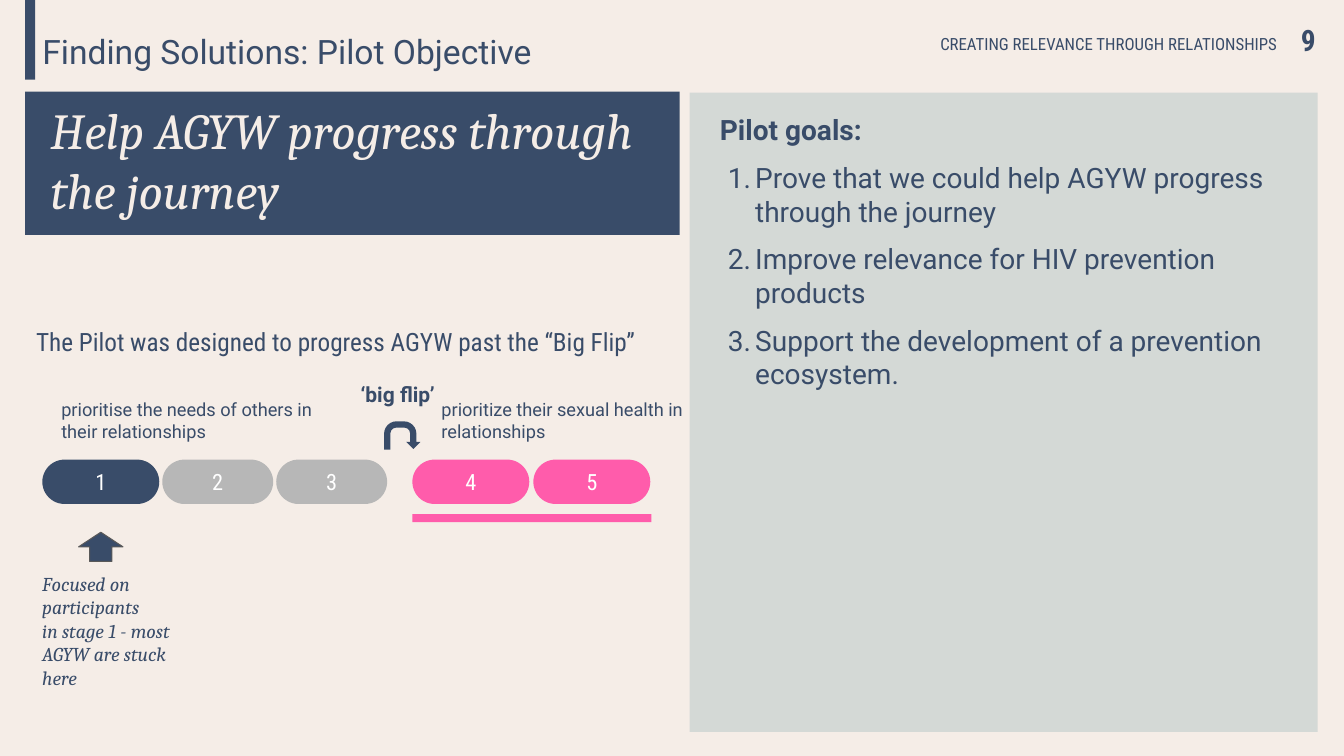
from pptx import Presentation
from pptx.dml.color import RGBColor
from pptx.enum.shapes import MSO_SHAPE
from pptx.enum.text import MSO_ANCHOR, MSO_AUTO_SIZE, PP_ALIGN
from pptx.oxml.ns import qn
from pptx.util import Inches, Pt
from lxml.etree import SubElement

NAVY = RGBColor(0x39, 0x4C, 0x69)
CREAM = RGBColor(0xF5, 0xED, 0xE7)
SAGE = RGBColor(0xD4, 0xD9, 0xD6)
GREY = RGBColor(0xB7, 0xB7, 0xB7)
DARK_GREY = RGBColor(0x59, 0x59, 0x59)
PINK = RGBColor(0xFF, 0x5C, 0xAB)
WHITE = RGBColor(0xFF, 0xFF, 0xFF)

SANS, NARROW, SERIF = "Roboto", "Roboto Condensed", "Cambria"
EVEN = (0.1, 0.1, 0.1, 0.1)
NONE = (0, 0, 0, 0)


class PageBuilder:
    """Holds the current slide and its text style."""

    def __init__(self, page, color):
        self.page = page
        self.color = color

    def shape(self, kind, at, fill, adjust=(), line=None):
        shape = self.page.shapes.add_shape(kind, *map(Inches, at))
        shape.shadow.inherit = False
        shape.fill.solid()
        shape.fill.fore_color.rgb = fill
        if line:
            shape.line.color.rgb = line
            shape.line.width = Pt(0.75)
        else:
            shape.line.fill.background()
        for index, value in enumerate(adjust):
            shape.adjustments[index] = value
        return shape

    def fill_text(self, shape, lines, size, font=SANS, color=None, insets=EVEN,
                  align=PP_ALIGN.LEFT, anchor=MSO_ANCHOR.TOP, bold=False, italic=False):
        frame = shape.text_frame
        frame.word_wrap = True
        frame.vertical_anchor = anchor
        (frame.margin_left, frame.margin_top,
         frame.margin_right, frame.margin_bottom) = map(Inches, insets)
        frame.text = "\n".join(lines)
        for para in frame.paragraphs:
            para.alignment = align
            self.style(para, size, font, color or self.color, bold, italic)
        return frame

    def style(self, para, size, font, color, bold, italic=False):
        para.font.size = Pt(size)
        para.font.name = font
        para.font.color.rgb = color
        para.font.bold = bold
        para.font.italic = italic

    def text(self, at, lines, size, grow=False, **style):
        box = self.page.shapes.add_textbox(*map(Inches, at))
        frame = self.fill_text(box, lines, size, **style)
        if grow:
            frame.auto_size = MSO_AUTO_SIZE.SHAPE_TO_FIT_TEXT
        return frame

    def pill(self, at, fill, label, size, **style):
        shape = self.shape(MSO_SHAPE.ROUNDED_RECTANGLE, at, fill, [0.5])
        self.fill_text(shape, [label], size, align=PP_ALIGN.CENTER,
                       anchor=MSO_ANCHOR.MIDDLE, **style)

    def numbered(self, frame, items, size):
        for item in items:
            para = frame.add_paragraph()
            para.text = item
            para.space_before = Pt(10)
            properties = para._p.get_or_add_pPr()
            properties.set("marL", str(Inches(0.35)))
            properties.set("indent", str(Inches(-0.27)))
            bullet_color = SubElement(properties, qn("a:buClr"))
            SubElement(bullet_color, qn("a:srgbClr"), val=str(self.color))
            SubElement(properties, qn("a:buAutoNum"), type="arabicPeriod")
            self.style(para, size, SANS, self.color, False)


def main():
    deck = Presentation()
    deck.slide_width, deck.slide_height = Inches(13.33), Inches(7.5)
    page = deck.slides.add_slide(deck.slide_layouts[6])
    page.background.fill.solid()
    page.background.fill.fore_color.rgb = CREAM
    builder = PageBuilder(page, NAVY)

    # Title, running header and page number
    builder.shape(MSO_SHAPE.RECTANGLE, (0.25, 0, 0.1, 0.79), NAVY)
    builder.text((0.42, 0.31, 6.33, 0.61), ["Finding Solutions: Pilot Objective"],
                 24, insets=NONE)
    header = dict(font=NARROW, insets=NONE, align=PP_ALIGN.RIGHT,
                  anchor=MSO_ANCHOR.MIDDLE)
    builder.text((6.84, 0.22, 5.83, 0.43),
                 ["CREATING RELEVANCE THROUGH RELATIONSHIPS"], 12, **header)
    builder.text((12.7, 0.18, 0.35, 0.43), ["9"], 21, bold=True, **header)

    # Objective banner
    builder.shape(MSO_SHAPE.RECTANGLE, (0.25, 0.91, 6.49, 1.42), NAVY)
    builder.text((0.25, 0.88, 6.49, 1.94), ["Help AGYW progress through the journey"],
                 36, font=SERIF, color=CREAM, insets=(0.25, 0.1, 0, 0), italic=True)

    # Journey stages
    builder.text((0.26, 3.14, 6.37, 0.5),
                 ["The Pilot was designed to progress AGYW past the “Big Flip”"],
                 18, grow=True, font=NARROW)
    stages = [(0.42, 1.16, NAVY), (1.61, 1.1, GREY), (2.74, 1.1, GREY),
              (4.09, 1.16, PINK), (5.29, 1.16, PINK)]
    for number, (left, width, fill) in enumerate(stages, 1):
        builder.pill((left, 4.56, width, 0.44), fill, str(number), 16,
                     font=NARROW, color=WHITE)
    builder.shape(MSO_SHAPE.RECTANGLE, (4.09, 5.1, 2.37, 0.08), PINK)

    # The flip between the two halves of the journey
    builder.pill((3.48, 3.78, 0.93, 0.26), CREAM, "‘big flip’", 15,
                 insets=NONE, bold=True)
    builder.shape(MSO_SHAPE.U_TURN_ARROW, (3.81, 4.18, 0.36, 0.28), NAVY,
                  [0.22, 0.25, 0.25, 0.44, 0.98])
    for left, width, caption in [
            (0.51, 2.86, "prioritise the needs of others in their relationships"),
            (4.28, 2.59, "prioritize their sexual health in relationships")]:
        builder.text((left, 3.85, width, 0.64), [caption], 13, grow=True)

    # Focus on stage 1
    builder.shape(MSO_SHAPE.UP_ARROW, (0.78, 5.28, 0.44, 0.29), NAVY,
                  [0.5, 0.5], line=DARK_GREY)
    builder.text((0.32, 5.57, 1.55, 1.38),
                 ["Focused on participants", "in stage 1 - most AGYW are stuck here"],
                 14, grow=True, font=SERIF, italic=True)

    # Pilot goals
    builder.shape(MSO_SHAPE.RECTANGLE, (6.84, 0.92, 6.23, 6.34), SAGE)
    goals = builder.text((6.84, 0.92, 6.23, 3.81), ["Pilot goals:"], 20,
                         insets=(0.3, 0.2, 0, 0), bold=True)
    builder.numbered(goals, [
        "Prove that we could help AGYW progress through the journey",
        "Improve relevance for HIV prevention products",
        "Support the development of a prevention ecosystem.",
    ], 20)

    deck.save("out.pptx")


if __name__ == "__main__":
    main()
